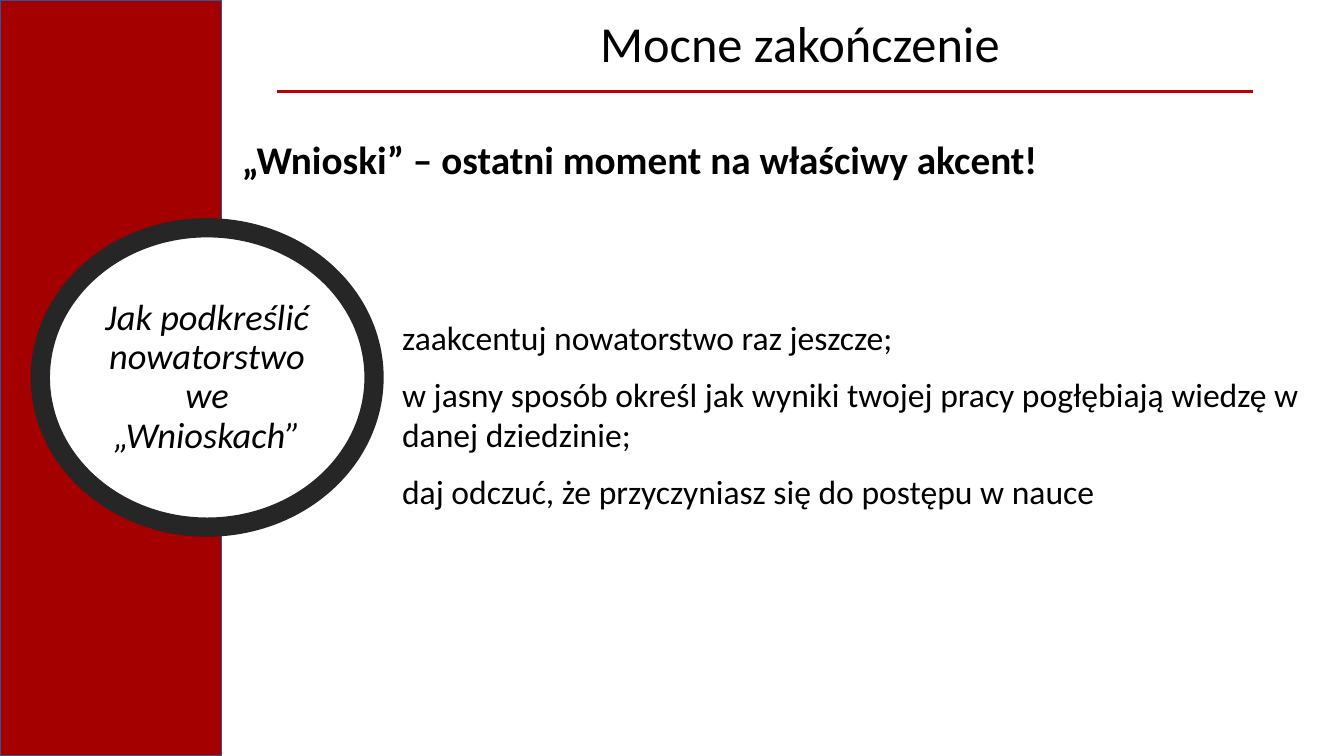
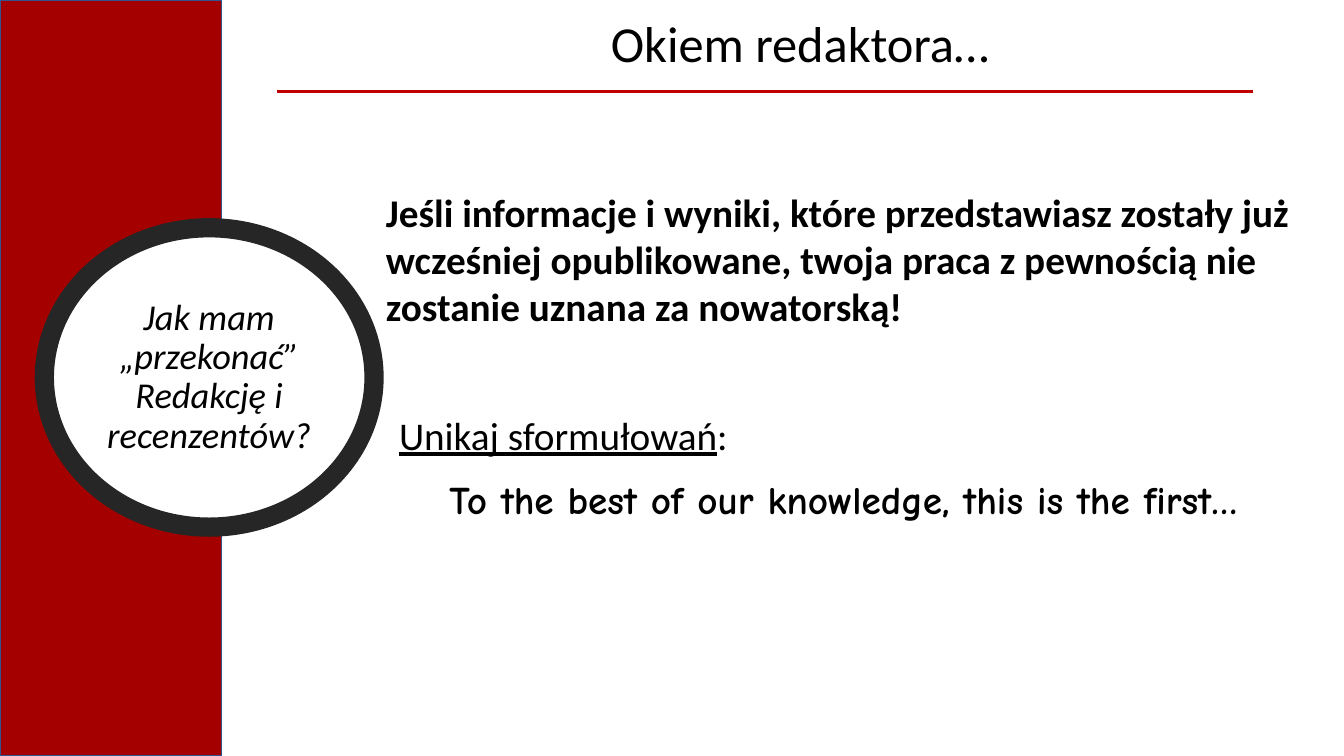
from lxml import etree
from pptx import Presentation
from pptx.dml.color import RGBColor
from pptx.enum.shapes import MSO_CONNECTOR, MSO_SHAPE
from pptx.enum.text import MSO_ANCHOR, PP_ALIGN
from pptx.oxml.ns import qn
from pptx.util import Inches, Pt

RECTANGLE, ELLIPSE = MSO_SHAPE.RECTANGLE, MSO_SHAPE.OVAL
STRAIGHT = MSO_CONNECTOR.STRAIGHT
LEFT, CENTER = PP_ALIGN.LEFT, PP_ALIGN.CENTER
MIDDLE = MSO_ANCHOR.MIDDLE

SLIDE_WIDTH, SLIDE_HEIGHT = 13.33, 7.5
BAND_WIDTH = 2.2
BODY_FONT, QUOTE_FONT = "Calibri", "Comic Neue"
BLACK, WHITE = "000000", "FFFFFF"
BAND_RED, BAND_EDGE = "A40000", "325491"
RULE_RED, RING_GRAY = "C00000", "262626"

TITLE_BOX = (3.05, 0.07, 9.77, 0.71)
RULE_START, RULE_END, RULE_TOP = 2.75, 12.43, 0.91
RING_RIGHT, RING_TOP, RING_HEIGHT = 3.71, 2.26, 2.97


def color(hex_string):
    return RGBColor.from_string(hex_string)


def style_paragraph(paragraph, size, font=BODY_FONT, bold=False, italic=False,
                    align=LEFT, space_after=0):
    paragraph.font.name = font
    paragraph.font.size = Pt(size)
    paragraph.font.bold = bold
    paragraph.font.italic = italic
    paragraph.font.color.rgb = color(BLACK)
    paragraph.alignment = align
    paragraph.space_after = Pt(space_after)


def add_text(slide, box, lines, size, **style):
    """Add a text box with one paragraph per line and return its paragraphs."""
    frame = slide.shapes.add_textbox(*map(Inches, box)).text_frame
    frame.word_wrap = True
    frame.text = "\n".join(lines)
    for paragraph in frame.paragraphs:
        style_paragraph(paragraph, size, **style)
    return frame.paragraphs


def add_filled_shape(slide, preset, box, fill, line, line_width):
    shape = slide.shapes.add_shape(preset, *map(Inches, box))
    shape.shadow.inherit = False
    shape.fill.solid()
    shape.fill.fore_color.rgb = color(fill)
    shape.line.color.rgb = color(line)
    shape.line.width = Pt(line_width)
    return shape


def add_title(slide, title):
    add_text(slide, TITLE_BOX, [title], 36, align=CENTER)
    rule = slide.shapes.add_connector(
        STRAIGHT, *map(Inches, (RULE_START, RULE_TOP, RULE_END, RULE_TOP)))
    rule.line.color.rgb = color(RULE_RED)
    rule.line.width = Pt(2.25)
    etree.SubElement(rule._element.spPr, qn("a:effectLst"))


def add_question_ring(slide, question, left):
    box = (left, RING_TOP, RING_RIGHT - left, RING_HEIGHT)
    ring = add_filled_shape(slide, ELLIPSE, box, WHITE, RING_GRAY, 13.75)
    frame = ring.text_frame
    frame.word_wrap = True
    frame.vertical_anchor = MIDDLE
    frame.text = question
    paragraph = frame.paragraphs[0]
    style_paragraph(paragraph, 26, italic=True, align=CENTER, space_after=6)
    paragraph.line_spacing = 0.9


def add_base_slide(presentation, title, question, ring_left):
    """Add a slide with the parts that all slides share."""
    slide = presentation.slides.add_slide(presentation.slide_layouts[6])
    add_filled_shape(slide, RECTANGLE, (0, 0, BAND_WIDTH, SLIDE_HEIGHT),
                     BAND_RED, BAND_EDGE, 1)
    add_question_ring(slide, question, ring_left)
    add_title(slide, title)
    return slide


def add_conclusions_slide(presentation):
    slide = add_base_slide(presentation, "Mocne zakończenie",
                           "Jak podkreślić nowatorstwo we „Wnioskach”", 0.4)
    add_text(slide, (2.3, 1.29, 10.81, 0.57),
             ["„Wnioski” – ostatni moment na właściwy akcent!"], 28, bold=True)
    add_text(slide, (3.89, 3.09, 9.36, 2.05), [
        "zaakcentuj nowatorstwo raz jeszcze;",
        "w jasny sposób określ jak wyniki twojej pracy pogłębiają wiedzę w danej dziedzinie;",
        "daj odczuć, że przyczyniasz się do postępu w nauce",
    ], 24, space_after=12)


def add_editor_slide(presentation):
    slide = add_base_slide(presentation, "Okiem redaktora…",
                           "Jak mam „przekonać” Redakcję i recenzentów?", 0.44)
    add_text(slide, (3.73, 1.82, 9.67, 1.51), [
        "Jeśli informacje i wyniki, które przedstawiasz zostały już wcześniej "
        "opublikowane, twoja praca z pewnością nie zostanie uznana za nowatorską!",
    ], 28, bold=True)
    heading, quote = add_text(slide, (3.86, 4.03, 9.47, 1.21), [
        "Unikaj sformułowań",
        "To the best of our knowledge, this is the first…",
    ], 28, space_after=12)
    heading.runs[0].font.underline = True
    heading.add_run().text = ":"
    style_paragraph(quote, 28, font=QUOTE_FONT, bold=True, space_after=12)
    quote._p.get_or_add_pPr().set("marL", str(Inches(0.5)))


def main():
    presentation = Presentation()
    presentation.slide_width = Inches(SLIDE_WIDTH)
    presentation.slide_height = Inches(SLIDE_HEIGHT)
    add_conclusions_slide(presentation)
    add_editor_slide(presentation)
    presentation.save("out.pptx")


if __name__ == "__main__":
    main()
